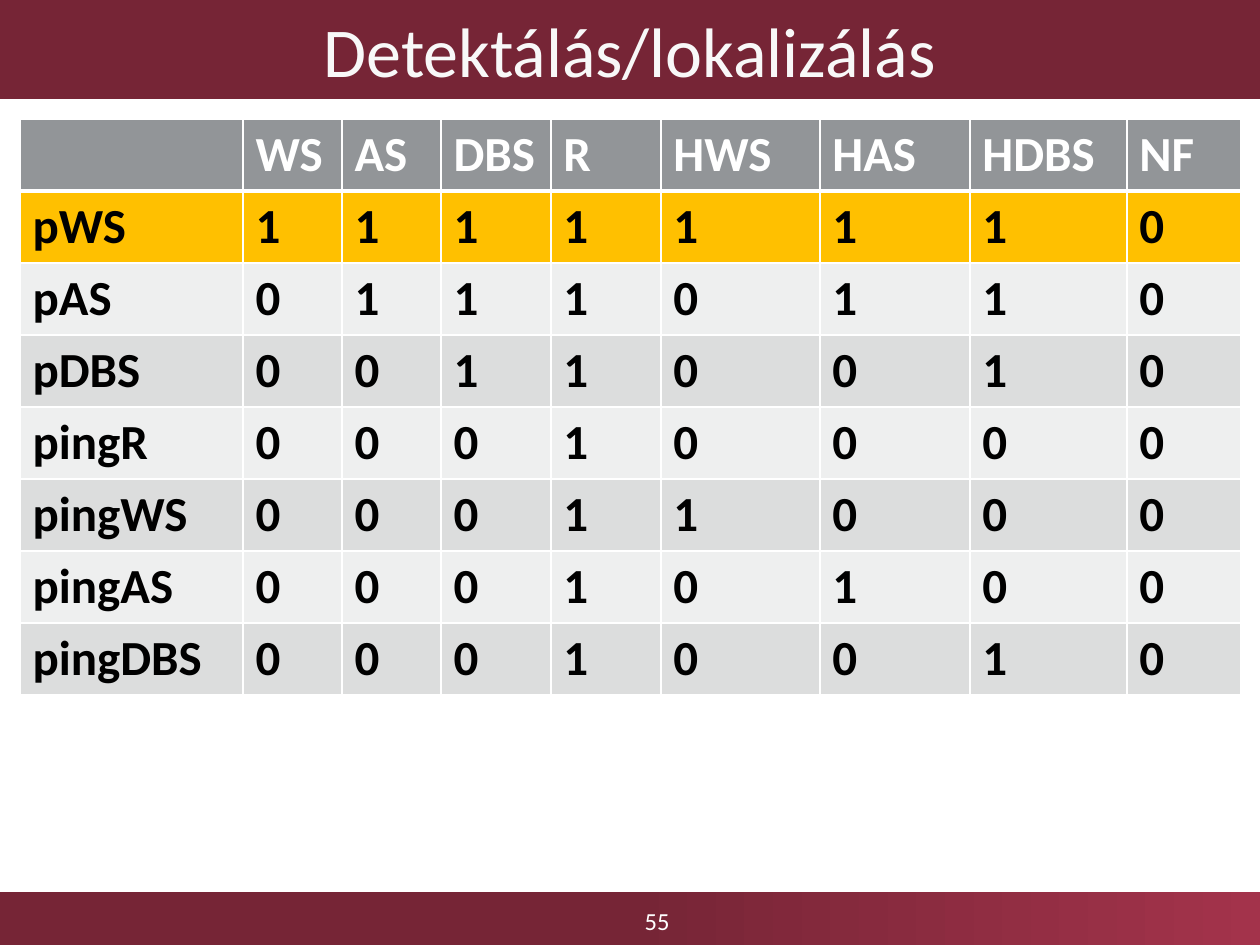
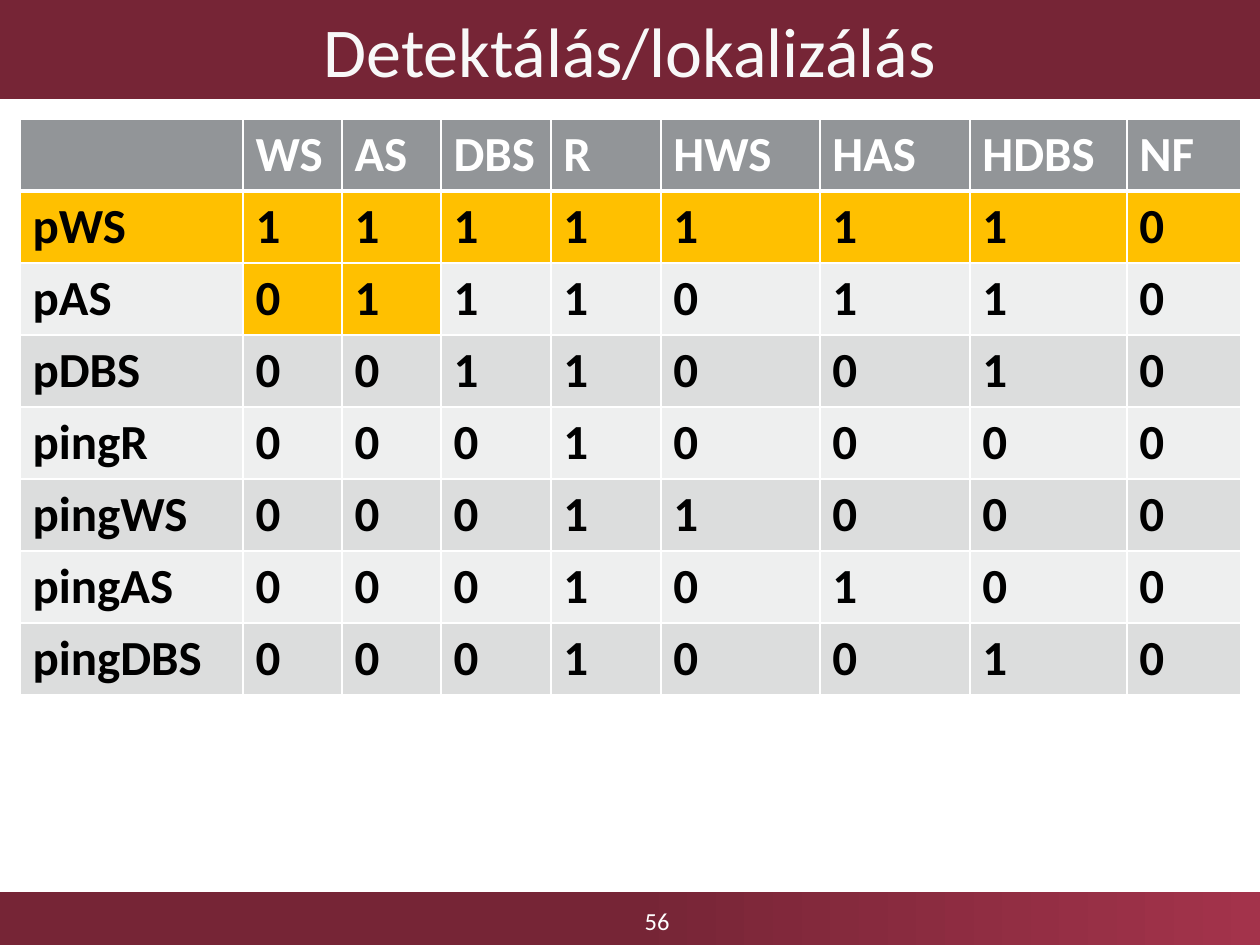
from copy import deepcopy
from dataclasses import dataclass

from lxml.etree import SubElement as Sub
from pptx import Presentation
from pptx.dml.color import RGBColor as RGB
from pptx.enum.shapes import MSO_SHAPE as Shape
from pptx.enum.text import MSO_ANCHOR as Anchor, MSO_AUTO_SIZE as Fit, PP_ALIGN as Align
from pptx.oxml.ns import qn
from pptx.util import Emu, Pt

# Content
TITLE = "Detektálás/lokalizálás"
HEAD = ["", "WS", "AS", "DBS", "R", "HWS", "HAS", "HDBS", "NF"]
TESTS = [
    ("pWS", "11111110"),
    ("pAS", "01110110"),
    ("pDBS", "00110010"),
    ("pingR", "00010000"),
    ("pingWS", "00011000"),
    ("pingAS", "00010100"),
    ("pingDBS", "00010010"),
]
FIRST = {(1, col) for col in range(len(HEAD))}
# Page number and the (row, column) cells marked on it
PAGES = [("55", FIRST), ("56", FIRST | {(2, 1), (2, 2)})]

# Places, in px
WIDE, HIGH = 1260, 945
TOP = (0, 0, WIDE, 99)
FOOT = (0, 892, WIDE, 53)
PAGE = (452, 896, 410, 49)
GRID = (20, 119)
COLS = [223, 99, 99, 110, 110, 159, 150, 157, 114]
ROW = 72


@dataclass(frozen=True)
class Theme:
    font: str = "Calibri"
    wine: str = "762536"
    rose: str = "A3334B"
    pale: str = "F8F8F8"
    white: str = "FFFFFF"
    black: str = "000000"
    gray: str = "929598"
    mark: str = "FFC000"
    bands: tuple = ("DCDDDD", "EEEFEF")
    title: int = 40
    cell: int = 28
    page: int = 14
    thin: int = 1
    thick: int = 3


LOOK = Theme()


def px(n):
    return Emu(round(n * 914400 / 126))


def box(place):
    return [px(n) for n in place]


def paint(fill, color):
    fill.solid()
    fill.fore_color.rgb = RGB.from_string(color)


def write(frame, text, size, color, bold=False, align=Align.LEFT):
    para = frame.paragraphs[0]
    para.alignment = align
    run = para.add_run()
    run.text = text
    font = run.font
    font.name, font.size, font.bold = LOOK.font, Pt(size), bold
    font.color.rgb = RGB.from_string(color)


def edge(cell, top, foot):
    props = cell._tc.get_or_add_tcPr()
    sides = [("L", LOOK.thin), ("R", LOOK.thin), ("T", top), ("B", foot)]
    for spot, (side, width) in enumerate(sides):
        line = Sub(props, qn(f"a:ln{side}"), w=str(Pt(width)))
        Sub(Sub(line, qn("a:solidFill")), qn("a:srgbClr"), val=LOOK.white)
        props.insert(spot, line)


def add_foot(slide, layout):
    """Draw the footer band and move it to the shared layout."""
    band = slide.shapes.add_shape(Shape.RECTANGLE, *box(FOOT))
    band.shadow.inherit = False
    band.line.fill.background()
    band.fill.gradient()
    band.fill.gradient_angle = 0
    stops = band.fill.gradient_stops
    for stop, color, pos in zip(stops, (LOOK.wine, LOOK.rose), (0.5, 1)):
        stop.color.rgb = RGB.from_string(color)
        stop.position = pos
    # The wine colour is flat over the left half
    ramp = band.element.xpath(".//a:gsLst")[0]
    start = deepcopy(ramp[0])
    start.set("pos", "0")
    ramp.insert(0, start)
    layout.shapes.element.insert(2, band.element)


def add_title(slide):
    title = slide.shapes.title
    title.left, title.top, title.width, title.height = box(TOP)
    paint(title.fill, LOOK.wine)
    frame = title.text_frame
    frame.auto_size = Fit.NONE
    frame.vertical_anchor = Anchor.MIDDLE
    write(frame, TITLE, LOOK.title, LOOK.pale, align=Align.CENTER)


def add_page(slide, text):
    frame = slide.shapes.add_textbox(*box(PAGE)).text_frame
    frame.word_wrap = True
    frame.vertical_anchor = Anchor.MIDDLE
    write(frame, text, LOOK.page, LOOK.white, align=Align.CENTER)


def add_grid(slide, marks):
    rows = [HEAD] + [[name, *bits] for name, bits in TESTS]
    size = (sum(COLS), ROW * len(rows))
    table = slide.shapes.add_table(len(rows), len(COLS), *box(GRID + size)).table
    table.horz_banding = False
    for col, width in zip(table.columns, COLS):
        col.width = px(width)
    for r, row in enumerate(rows):
        table.rows[r].height = px(ROW)
        top = LOOK.thick if r == 1 else LOOK.thin
        foot = LOOK.thick if r == 0 else LOOK.thin
        back = LOOK.bands[(r + 1) % 2] if r else LOOK.gray
        ink = LOOK.black if r else LOOK.white
        for c, text in enumerate(row):
            cell = table.cell(r, c)
            paint(cell.fill, LOOK.mark if (r, c) in marks else back)
            edge(cell, top, foot)
            if text:
                write(cell.text_frame, text, LOOK.cell, ink, bold=True)


def main():
    deck = Presentation()
    deck.slide_width, deck.slide_height = px(WIDE), px(HIGH)
    layout = deck.slide_layouts[5]
    for number, (page, marks) in enumerate(PAGES):
        slide = deck.slides.add_slide(layout)
        if number == 0:
            add_foot(slide, layout)
        add_page(slide, page)
        add_title(slide)
        add_grid(slide, marks)
    deck.save("out.pptx")


if __name__ == "__main__":
    main()
